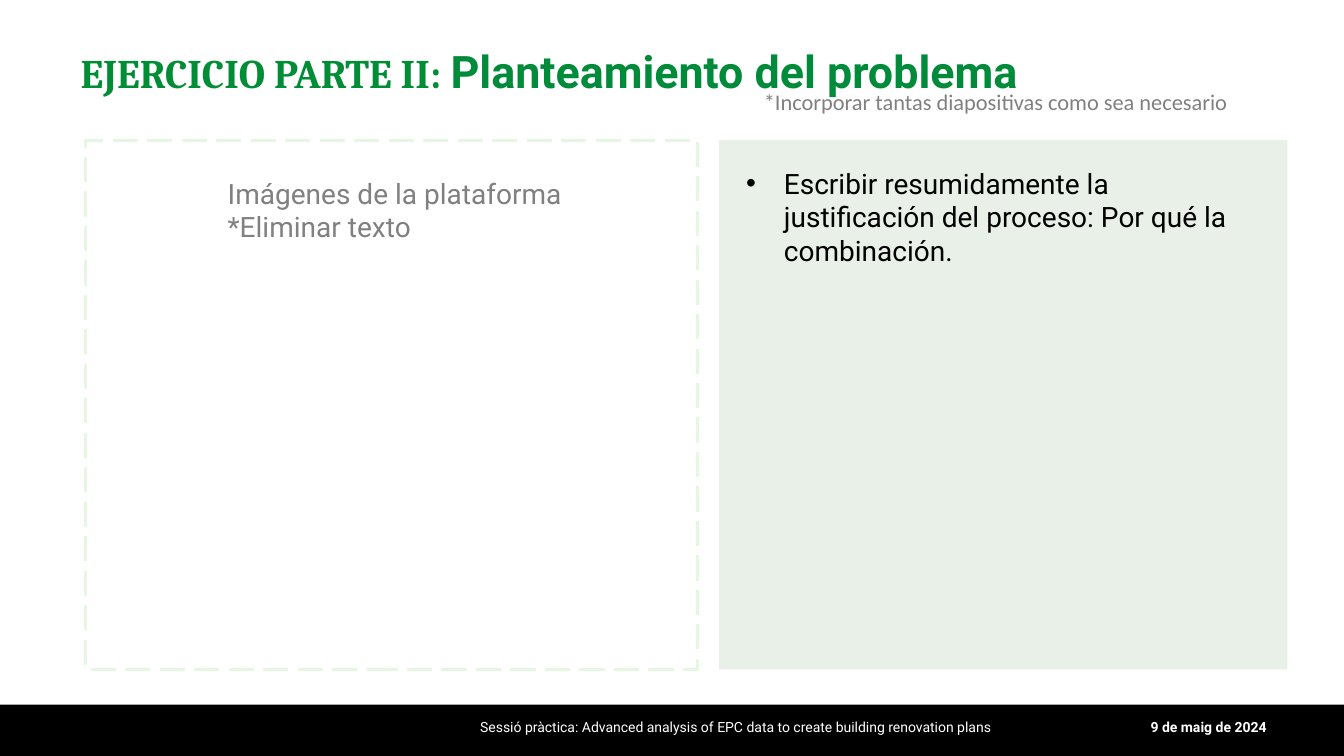
from pptx import Presentation
from pptx.dml.color import RGBColor
from pptx.enum.dml import MSO_LINE
from pptx.enum.shapes import MSO_SHAPE
from pptx.enum.text import MSO_ANCHOR as ANCHOR, MSO_AUTO_SIZE, PP_ALIGN as ALIGN
from pptx.oxml.ns import qn
from pptx.util import Inches, Pt

BLACK = RGBColor(0x00, 0x00, 0x00)
WHITE = RGBColor(0xFF, 0xFF, 0xFF)
GRAY = RGBColor(0x80, 0x80, 0x80)
TITLE_GREEN = RGBColor(0x00, 0x8D, 0x36)
TOPIC_GREEN = RGBColor(0x00, 0x8B, 0x3B)
PANEL_GREEN = RGBColor(0xE8, 0xF0, 0xE8)
DASH_GREEN = RGBColor(0xE5, 0xF7, 0xE1)

SLIDE_W, SLIDE_H = 13.33, 7.5
PANEL_TOP, PANEL_H = 1.39, 5.25
FOOTER_H = 0.51

prs = Presentation()
prs.slide_width, prs.slide_height = Inches(SLIDE_W), Inches(SLIDE_H)
slide = prs.slides.add_slide(prs.slide_layouts[1])
title, justification = slide.placeholders


def add_panel(left, top, width, height, fill=None, dash=None):
    panel = slide.shapes.add_shape(
        MSO_SHAPE.RECTANGLE, *map(Inches, (left, top, width, height)))
    panel.shadow.inherit = False
    if fill is None:
        panel.fill.background()
    else:
        panel.fill.solid()
        panel.fill.fore_color.rgb = fill
    if dash is None:
        panel.line.fill.background()
    else:
        panel.line.color.rgb = dash
        panel.line.width = Pt(2.25)
        panel.line.dash_style = MSO_LINE.LONG_DASH
    return panel


def write(holder, box, lines, size, color, font="Roboto", align=ALIGN.LEFT,
          anchor=ANCHOR.TOP, bold=False):
    holder.left, holder.top, holder.width, holder.height = map(Inches, box)
    frame = holder.text_frame
    frame.text = "\n".join(lines)
    frame.word_wrap = True
    frame.auto_size = MSO_AUTO_SIZE.NONE
    frame.vertical_anchor = anchor
    for line in frame.paragraphs:
        line.alignment = align
        line.space_before = Pt(0)
        line.font.size, line.font.name = Pt(size), font
        line.font.color.rgb, line.font.bold = color, bold
    return frame


# Footer band and the two panels, behind all text
footer_band = add_panel(0, SLIDE_H - FOOTER_H, SLIDE_W, FOOTER_H, fill=BLACK)
text_panel = add_panel(7.13, PANEL_TOP, 5.64, PANEL_H, fill=PANEL_GREEN)
image_panel = add_panel(0.85, PANEL_TOP, 6.07, PANEL_H, dash=DASH_GREEN)
for panel in (image_panel, text_panel, footer_band):
    title._element.addprevious(panel._element)
    title._element.getparent().insert(2, panel._element)

# Title in two fonts
heading = write(title, (0.7, 0.35, 11.8, 0.7), ["EJERCICIO PARTE II: "], 29,
                TITLE_GREEN, "Cambria", anchor=ANCHOR.MIDDLE, bold=True)
topic = heading.paragraphs[0].add_run()
topic.text = "Planteamiento del problema"
topic.font.size, topic.font.name = Pt(32), "Roboto"
topic.font.color.rgb = TOPIC_GREEN

# Justification, without the bullet of the body placeholder
body = justification.text_frame.paragraphs[0]._p.get_or_add_pPr()
body.set("marL", "0")
body.set("indent", "0")
body.append(body.makeelement(qn("a:buNone"), {}))
write(justification, (7.3, 1.6, 5.36, 4.91),
      ["Escribir resumidamente la justificación del proceso: "
       "Por qué la combinación."], 20, BLACK)

# Hints and footer texts
captions = [
    ((2.16, 1.7, 3.61, 0.97), ["Imágenes de la plataforma", "*Eliminar texto"],
     20, GRAY, "Roboto", ALIGN.LEFT, ANCHOR.TOP, False),
    ((6.67, 0.83, 6.41, 0.37),
     ["*Incorporar tantas diapositivas como sea necesario"],
     16, GRAY, "Calibri", ALIGN.CENTER, ANCHOR.TOP, False),
    ((3.36, 7.08, 7.87, 0.27),
     ["Sessió pràctica: Advanced analysis of EPC data to create building "
      "renovation plans"],
     10, WHITE, "Roboto", ALIGN.CENTER, ANCHOR.TOP, False),
    ((9.42, 7.01, 3.24, 0.4), ["9 de maig de 2024"],
     10, WHITE, "Roboto", ALIGN.RIGHT, ANCHOR.MIDDLE, True),
]
for caption in captions:
    write(slide.shapes.add_textbox(0, 0, 0, 0), *caption)

prs.save("out.pptx")
